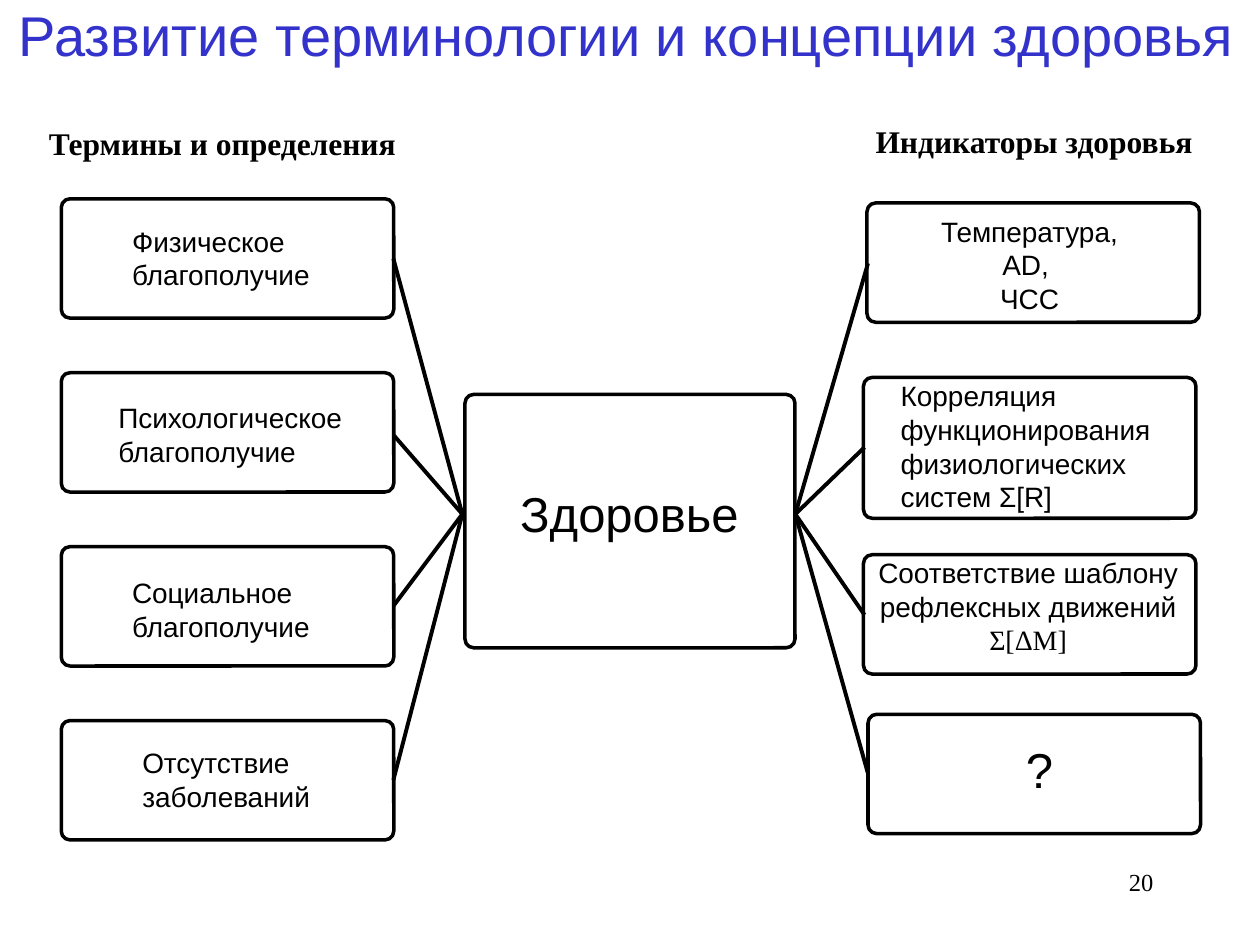
from lxml import etree
from pptx import Presentation
from pptx.dml.color import RGBColor
from pptx.enum import shapes, text
from pptx.oxml.ns import qn
from pptx.util import Pt

BLACK = RGBColor(0x00, 0x00, 0x00)
WHITE = RGBColor(0xFF, 0xFF, 0xFF)
BLUE = RGBColor(0x33, 0x33, 0xCC)
SANS, SERIF = "Arial", "Times New Roman"
LEFT, CENTER, RIGHT = text.PP_ALIGN.LEFT, text.PP_ALIGN.CENTER, text.PP_ALIGN.RIGHT

prs = Presentation()
prs.slide_width, prs.slide_height = Pt(720), Pt(540)
slide = prs.slides.add_slide(prs.slide_layouts[5])


def add_label(left, top, width, height, lines, size=16, font=SANS,
              align=LEFT, bold=False, wrap=True):
    label = slide.shapes.add_textbox(Pt(left), Pt(top), Pt(width), Pt(height))
    frame = label.text_frame
    frame.word_wrap = wrap
    frame.text = "\n".join(lines)
    for paragraph in frame.paragraphs:
        paragraph.alignment = align
        paragraph.font.name = font
        paragraph.font.size = Pt(size)
        paragraph.font.bold = bold
        paragraph.font.color.rgb = BLACK
    return frame


title = slide.shapes.title
title.left, title.top, title.width, title.height = Pt(3.6), Pt(-3.6), Pt(714), Pt(46)
title.text_frame.word_wrap = False
title.text_frame.vertical_anchor = text.MSO_ANCHOR.TOP
title.text_frame.text = "Развитие терминологии и концепции здоровья"
heading = title.text_frame.paragraphs[0]
heading.alignment = LEFT
heading.font.name = SANS
heading.font.size = Pt(32)
heading.font.color.rgb = BLUE

# Boxes: four terms, the central concept, four indicators
BOX_W, BOX_H = 190, 68.2
TERM_X = 35
term_boxes = [(TERM_X, 113.6 + 99.4 * row, BOX_W, BOX_H) for row in range(4)]
health_box = (265.7, 225.4, 188.6, 144.8)
indicator_boxes = [
    (495.4, 116, BOX_W, BOX_H),
    (493.4, 215.7, BOX_W, 80.5),
    (493.4, 317, BOX_W, BOX_H),
    (496, 408.2, BOX_W, BOX_H),
]
for left, top, width, height in [*term_boxes, health_box, *indicator_boxes]:
    box = slide.shapes.add_shape(shapes.MSO_SHAPE.ROUNDED_RECTANGLE,
                                 Pt(left), Pt(top), Pt(width), Pt(height))
    box.adjustments[0] = 5 / height
    box.shadow.inherit = False
    box.fill.solid()
    box.fill.fore_color.rgb = WHITE
    box.line.color.rgb = BLACK
    box.line.width = Pt(2)

# Lines fan out from both sides of the central box
HUB_Y = 293.8
fans = [
    (264.2, [(224.8, 147.8), (224.8, 248.5), (224.8, 346.3), (224.8, 445.7)]),
    (454.5, [(496, 150.5), (494, 255.6), (494, 351.4), (496, 442)]),
]
for hub_x, ends in fans:
    for end_x, end_y in ends:
        link = slide.shapes.add_connector(shapes.MSO_CONNECTOR.STRAIGHT,
                                          Pt(hub_x), Pt(HUB_Y), Pt(end_x), Pt(end_y))
        link.line.color.rgb = BLACK
        link.line.width = Pt(2.25)
        etree.SubElement(link._element.spPr, qn("a:effectLst"))

add_label(20.9, 67.4, 223, 29, ["Термины и определения"], 18, SERIF, bold=True)
add_label(493.2, 66.2, 223, 29, ["Индикаторы здоровья"], 18, SERIF, bold=True)

terms = [
    (68.4, 124.6, 117, ["Физическое", "благополучие"]),
    (60.5, 225.4, 148, ["Психологическое", "благополучие"]),
    (68.4, 325.4, 164, ["Социальное", "благополучие"]),
    (74.2, 422.6, 112, ["Отсутствие", "заболеваний"]),
]
for left, top, width, lines in terms:
    add_label(left, top, width, 46, lines, wrap=False)

add_label(290.2, 272.9, 141, 41, ["Здоровье"], 28, wrap=False)

add_label(519.8, 118.8, 137, 65.5, ["Температура,", "AD, ", "ЧСС"], align=CENTER)
add_label(507.6, 213, 190, 87,
          ["Корреляция функционирования физиологических систем Ʃ[R]"])
pattern = add_label(492.5, 313.9, 190, 87,
                    ["Соответствие шаблону рефлексных движений", "Ʃ[ΔM]"], align=CENTER)
pattern.paragraphs[1].font.name = SERIF
add_label(499, 419, 190, 41, ["?"], 28, align=CENTER)

add_label(516.2, 491.8, 150, 36, ["20"], 14, SERIF, RIGHT)

prs.save("out.pptx")
